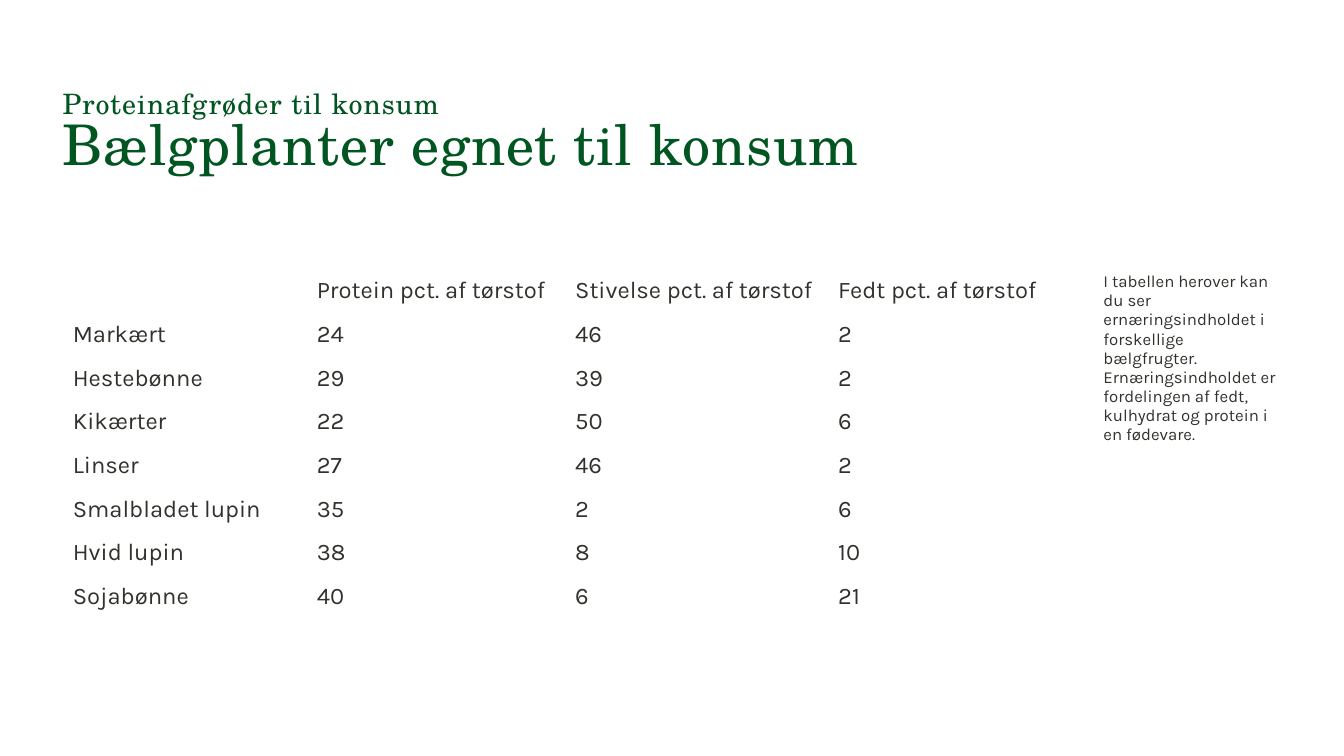
"""Build a slide with a table of the nutrients in legumes."""
import pptx
import pptx.dml.color
import pptx.enum.text
import pptx.util

Cm = pptx.util.Cm
Pt = pptx.util.Pt

GREEN = "005521"
DARK = "32322D"
SERIF = "TeX Gyre Schola"
SANS = "Karla"

SUBJECT = "Proteinafgrøder til konsum"
HEADLINE = "Bælgplanter egnet til konsum"
EXPLANATION = (
    "I tabellen herover kan du ser ernæringsindholdet i forskellige bælgfrugter. "
    "Ernæringsindholdet er fordelingen af fedt, kulhydrat og protein i en fødevare."
)
HEADER = ("", "Protein pct. af tørstof", "Stivelse pct. af tørstof", "Fedt pct. af tørstof")
LEGUMES = [
    ("Markært", 24, 46, 2),
    ("Hestebønne", 29, 39, 2),
    ("Kikærter", 22, 50, 6),
    ("Linser", 27, 46, 2),
    ("Smalbladet lupin", 35, 2, 6),
    ("Hvid lupin", 38, 8, 10),
    ("Sojabønne", 40, 6, 21),
]
COLUMN_WIDTHS = (6.15, 6.51, 6.63, 6.15)
ROW_HEIGHT = 1.1
LEFT = 1.58


def color(hex_string):
    return pptx.dml.color.RGBColor.from_string(hex_string)


def add_run(paragraph, text, font_name, size, hex_string, spacing=None):
    run = paragraph.add_run()
    run.text = text
    run.font.name = font_name
    run.font.size = Pt(size)
    run.font.color.rgb = color(hex_string)
    if spacing is not None:
        run.font._element.set("spc", str(spacing))


def add_text_box(slide, left, top, width, height, line_spacing):
    shape = slide.shapes.add_textbox(Cm(left), Cm(top), Cm(width), Cm(height))
    frame = shape.text_frame
    frame.word_wrap = True
    frame.vertical_anchor = pptx.enum.text.MSO_ANCHOR.TOP
    frame.margin_left = frame.margin_right = frame.margin_top = frame.margin_bottom = 0
    paragraph = frame.paragraphs[0]
    paragraph.line_spacing = line_spacing
    return paragraph


def add_nutrient_table(slide, rows):
    table = slide.shapes.add_table(
        len(rows), len(COLUMN_WIDTHS), Cm(LEFT), Cm(6.78),
        Cm(sum(COLUMN_WIDTHS)), Cm(ROW_HEIGHT * len(rows)),
    ).table
    table.first_row = False
    table.horz_banding = False
    for column, width in zip(table.columns, COLUMN_WIDTHS):
        column.width = Cm(width)
    for table_row, values in zip(table.rows, rows):
        table_row.height = Cm(ROW_HEIGHT)
        for cell, value in zip(table_row.cells, values):
            cell.fill.background()
            cell.vertical_anchor = pptx.enum.text.MSO_ANCHOR.MIDDLE
            if value != "":
                add_run(cell.text_frame.paragraphs[0], str(value), SANS, 17, DARK)


def main():
    presentation = pptx.Presentation()
    presentation.slide_width = Cm(33.87)
    presentation.slide_height = Cm(19.05)
    slide = presentation.slides.add_slide(presentation.slide_layouts[6])

    title = add_text_box(slide, LEFT, 2.31, 30.68, 2.9, 0.85)
    add_run(title, SUBJECT, SERIF, 20, GREEN, 70)
    title.add_line_break()
    add_run(title, HEADLINE, SERIF, 40, GREEN, 70)

    explanation = add_text_box(slide, 27.81, 6.86, 4.47, 9.19, 0.95)
    explanation.space_after = Pt(6)
    add_run(explanation, EXPLANATION, SANS, 12, DARK)

    add_nutrient_table(slide, [HEADER] + LEGUMES)
    presentation.save("out.pptx")


if __name__ == "__main__":
    main()
